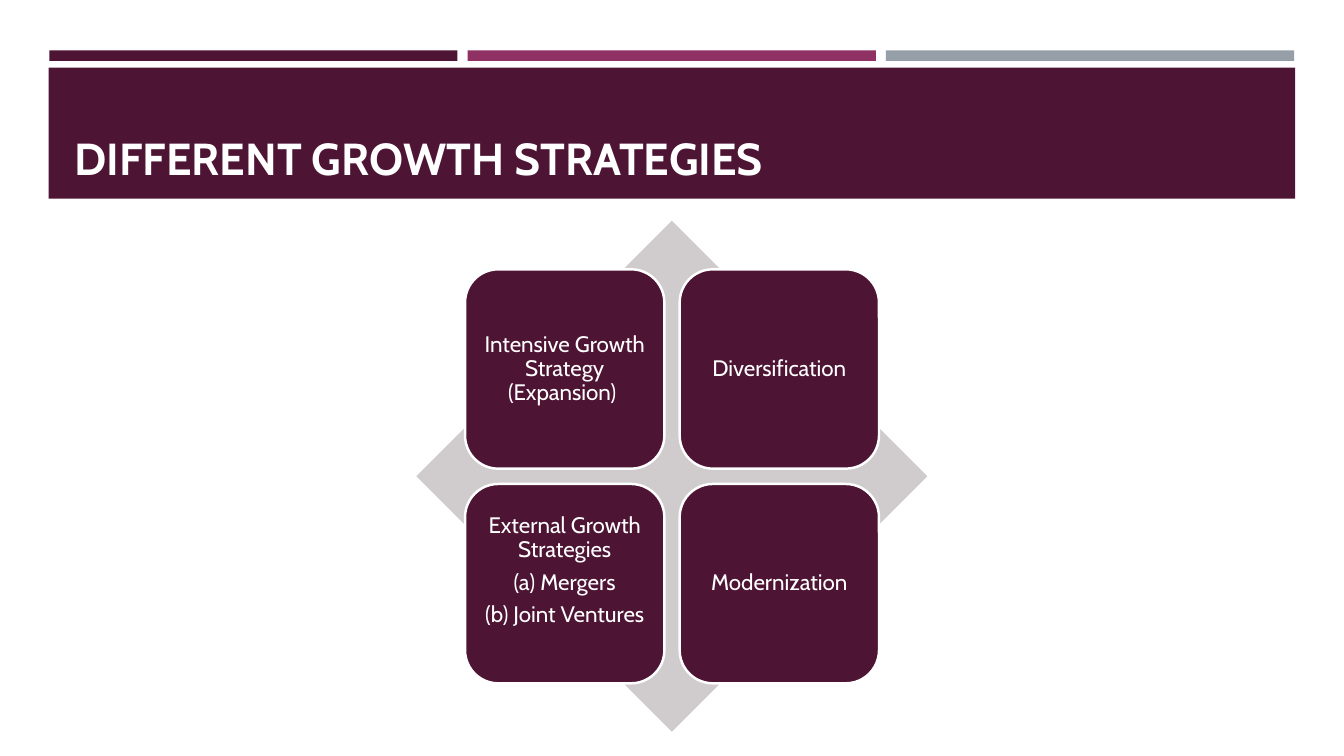
from dataclasses import dataclass

from pptx import Presentation
from pptx.dml.color import RGBColor
from pptx.enum.shapes import MSO_SHAPE
from pptx.enum.text import MSO_ANCHOR, PP_ALIGN
from pptx.shapes.autoshape import Shape
from pptx.slide import Slide
from pptx.util import Pt

RECTANGLE = MSO_SHAPE.RECTANGLE
DIAMOND = MSO_SHAPE.DIAMOND
ROUNDED = MSO_SHAPE.ROUNDED_RECTANGLE
LEFT, CENTER = PP_ALIGN.LEFT, PP_ALIGN.CENTER
MIDDLE, BOTTOM = MSO_ANCHOR.MIDDLE, MSO_ANCHOR.BOTTOM

FONT = "Cabin"
PLUM, MAGENTA, SLATE = "4D1434", "903163", "969FA7"
PALE, WHITE = "D0CCCE", "FFFFFF"


@dataclass
class Box:
    left: float
    top: float
    width: float
    height: float


@dataclass
class Strategy:
    column: int
    row: int
    lines: list[str]
    inset: float = 5
    lift: float = 0  # extra bottom inset that raises the text


BAR_COLORS = [PLUM, MAGENTA, SLATE]
BAR_PITCH = 298.8
FIRST_BAR = Box(35.2, 36, 291.6, 7.5)
TITLE_BAND = Box(34.7, 48.4, 890.4, 93.6)
TITLE_BOX = Box(46.1, 55.4, 868.3, 79.9)
BACK_DIAMOND = Box(297.5, 157.7, 365, 365)
FIRST_TILE = Box(332.2, 192.4, 142.4, 142.4)
TILE_PITCH = 153.3

STRATEGIES = [
    Strategy(0, 0, ["Intensive Growth Strategy (Expansion) "]),
    Strategy(1, 0, ["Diversification"]),
    Strategy(0, 1, ["External Growth Strategies", "(a) Mergers", "(b) Joint Ventures"],
             inset=4, lift=18),
    Strategy(1, 1, ["Modernization"]),
]


def color(value: str) -> RGBColor:
    return RGBColor.from_string(value)


def place(box: Box) -> tuple[Pt, Pt, Pt, Pt]:
    return Pt(box.left), Pt(box.top), Pt(box.width), Pt(box.height)


def offset(box: Box, right: float = 0, down: float = 0) -> Box:
    return Box(box.left + right, box.top + down, box.width, box.height)


def add_panel(slide: Slide, kind: MSO_SHAPE, box: Box, fill: str, outline: str = "") -> Shape:
    shape = slide.shapes.add_shape(kind, *place(box))
    shape.shadow.inherit = False
    shape.fill.solid()
    shape.fill.fore_color.rgb = color(fill)
    if outline:
        shape.line.color.rgb = color(outline)
        shape.line.width = Pt(1.75)
    else:
        shape.line.fill.background()
    return shape


def write(shape: Shape, lines: list[str], *, size: float, bold: bool = False,
          align: PP_ALIGN = LEFT, anchor: MSO_ANCHOR = MIDDLE,
          inset_x: float = 7.2, inset_y: float = 3.6, lift: float = 0,
          line_spacing: float = 1, space_after: float = 0) -> None:
    frame = shape.text_frame
    frame.word_wrap = True
    frame.vertical_anchor = anchor
    frame.margin_left = frame.margin_right = Pt(inset_x)
    frame.margin_top = Pt(inset_y)
    frame.margin_bottom = Pt(inset_y + lift)
    for index, line in enumerate(lines):
        paragraph = frame.add_paragraph() if index else frame.paragraphs[0]
        paragraph.alignment = align
        paragraph.line_spacing = line_spacing
        paragraph.space_after = Pt(space_after)
        run = paragraph.add_run()
        run.text = line
        run.font.name = FONT
        run.font.size = Pt(size)
        run.font.bold = bold
        run.font.color.rgb = color(WHITE)


def main() -> None:
    presentation = Presentation()
    presentation.slide_width, presentation.slide_height = Pt(960), Pt(540)
    slide = presentation.slides.add_slide(presentation.slide_layouts[6])

    # Colour bars above the title
    for index, fill in enumerate(BAR_COLORS):
        add_panel(slide, RECTANGLE, offset(FIRST_BAR, right=index * BAR_PITCH), fill)

    # Title band
    add_panel(slide, RECTANGLE, TITLE_BAND, PLUM)
    title = slide.shapes.add_textbox(*place(TITLE_BOX))
    write(title, ["DIFFERENT GROWTH STRATEGIES"], size=32, bold=True, anchor=BOTTOM)

    # Strategy tiles on the diamond
    add_panel(slide, DIAMOND, BACK_DIAMOND, PALE)
    for strategy in STRATEGIES:
        box = offset(FIRST_TILE, strategy.column * TILE_PITCH, strategy.row * TILE_PITCH)
        tile = add_panel(slide, ROUNDED, box, PLUM, outline=WHITE)
        write(tile, strategy.lines, size=16, align=CENTER,
              inset_x=strategy.inset, inset_y=strategy.inset, lift=strategy.lift,
              line_spacing=0.9, space_after=6)

    presentation.save("out.pptx")


if __name__ == "__main__":
    main()
